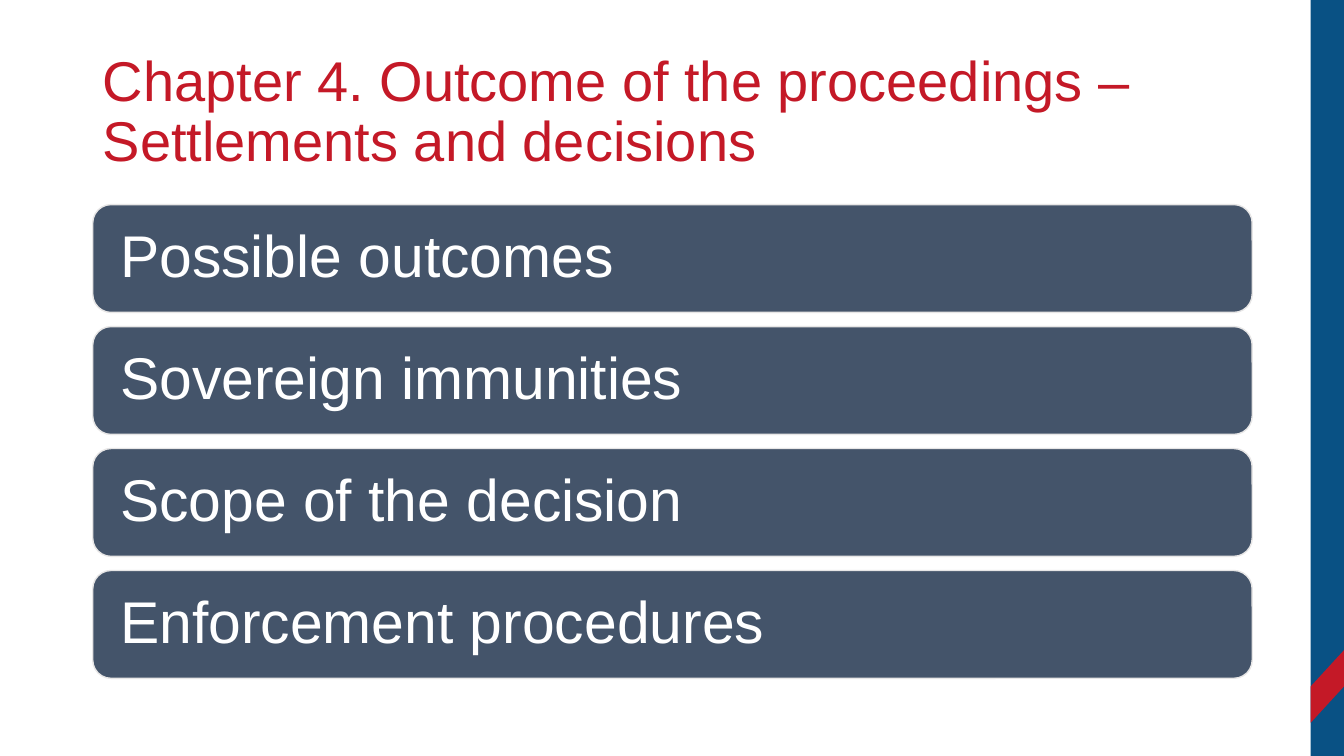
from pptx import Presentation
from pptx.dml.color import RGBColor
from pptx.enum import shapes, text
from pptx.util import Inches, Pt

COLORS = {"blue": "095184", "red": "C41927", "slate": "44546A",
          "edge": "E7E6E6", "white": "FFFFFF"}
TOPICS = ["Possible outcomes", "Sovereign immunities",
          "Scope of the decision", "Enforcement procedures"]
LEFT, WIDTH = 0.92, 11.5
BAR_TOP, BAR_HEIGHT, BAR_GAP = 2.03, 1.07, 0.14


class SlideBuilder:
    """Holds the style and the current slide."""

    font = "Arial"

    def __init__(self, page):
        self.page = page

    def color(self, name):
        return RGBColor.from_string(COLORS[name])

    def paint(self, shape, fill, line=None):
        shape.shadow.inherit = False
        shape.fill.solid()
        shape.fill.fore_color.rgb = self.color(fill)
        if line:
            shape.line.color.rgb = self.color(line)
            shape.line.width = Pt(1)
        else:
            shape.line.fill.background()

    def set_text(self, shape, wording, size, color, side, edge):
        frame = shape.text_frame
        frame.text = wording
        frame.word_wrap = True
        frame.auto_size = text.MSO_AUTO_SIZE.NONE
        frame.vertical_anchor = text.MSO_ANCHOR.MIDDLE
        frame.margin_left = frame.margin_right = Inches(side)
        frame.margin_top = frame.margin_bottom = Inches(edge)
        para = frame.paragraphs[0]
        para.alignment = text.PP_ALIGN.LEFT
        para.line_spacing = 0.9
        para.space_before = Pt(0)
        para.font.name = self.font
        para.font.size = Pt(size)
        para.font.color.rgb = self.color(color)

    def title(self, wording, left, top, width, height):
        box = self.page.shapes.title
        box.left, box.top = Inches(left), Inches(top)
        box.width, box.height = Inches(width), Inches(height)
        self.set_text(box, wording, 40, "red", 0.1, 0.05)

    def band(self, left, top, width, height):
        band = self.page.shapes.add_shape(
            shapes.MSO_SHAPE.RECTANGLE,
            Inches(left), Inches(top), Inches(width), Inches(height))
        self.paint(band, "blue")

    def stripe(self, points):
        corners = [(Inches(x), Inches(y)) for x, y in points]
        builder = self.page.shapes.build_freeform(*corners[0])
        builder.add_line_segments(corners[1:], close=True)
        self.paint(builder.convert_to_shape(), "red")

    def bar(self, wording, left, top, width, height):
        bar = self.page.shapes.add_shape(
            shapes.MSO_SHAPE.ROUNDED_RECTANGLE,
            Inches(left), Inches(top), Inches(width), Inches(height))
        bar.adjustments[0] = 0.17
        self.paint(bar, "slate", "edge")
        self.set_text(bar, wording, 42, "white", 0.22, 0.1)


def main():
    deck = Presentation()
    deck.slide_width, deck.slide_height = Inches(13.33), Inches(7.5)
    slide = SlideBuilder(deck.slides.add_slide(deck.slide_layouts[5]))

    # Side band with its diagonal stripe
    slide.band(13, 0, 0.33, 7.5)
    slide.stripe([(13, 6.81), (13.33, 6.45), (13.33, 6.81), (13, 7.17)])

    # Title
    slide.title("Chapter 4. Outcome of the proceedings – Settlements and decisions",
                LEFT, 0.4, WIDTH, 1.45)

    # Topic bars
    for row, topic in enumerate(TOPICS):
        top = BAR_TOP + row * (BAR_HEIGHT + BAR_GAP)
        slide.bar(topic, LEFT, top, WIDTH, BAR_HEIGHT)

    deck.save("out.pptx")


if __name__ == "__main__":
    main()
